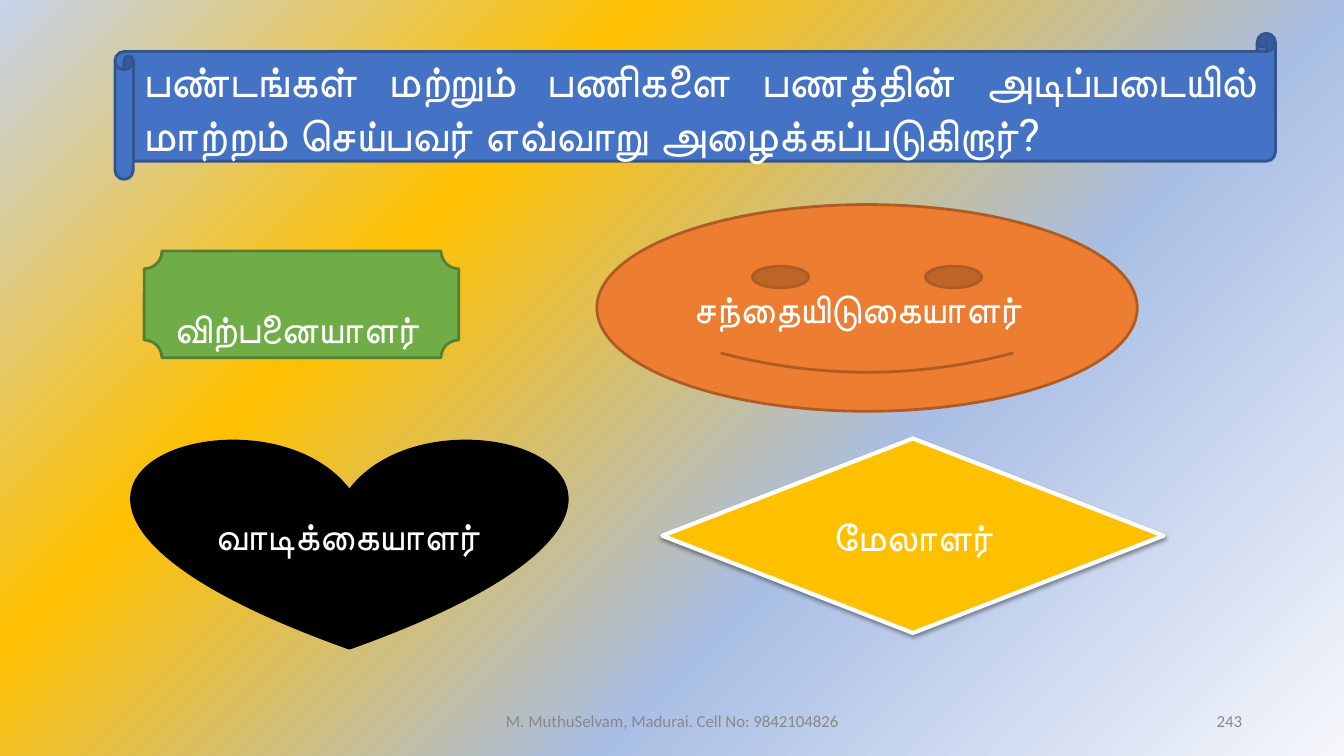
from dataclasses import dataclass

from lxml import etree
from pptx import Presentation, util as u
from pptx.dml import color
from pptx.enum import shapes, text
from pptx.oxml import parse_xml

WIDTH, HEIGHT = 13.33, 7.5
NS = 'xmlns:a="http://schemas.openxmlformats.org/drawingml/2006/main"'
KIND = shapes.MSO_SHAPE
ALIGN = text.PP_ALIGN


@dataclass(frozen=True)
class Theme:
    face: str = "Roboto"
    footer_face: str = "Calibri"
    title_size: int = 32
    answer_size: int = 28
    footer_size: int = 12
    white: str = "FFFFFF"
    grey: str = "888888"
    blue: str = "4472C4"
    blue_edge: str = "325491"
    green: str = "70AD47"
    green_edge: str = "538035"
    orange: str = "ED7D31"
    orange_edge: str = "AF5C24"
    black: str = "000000"
    amber: str = "FFC000"
    backdrop: tuple = ((0, "F5F7FC"), (36, "A9BEE4"), (69, "FFC000"), (100, "C5D3ED"))


THEME = Theme()


@dataclass(frozen=True)
class Area:
    """Place on the slide, in inches."""
    left: float
    top: float
    width: float
    height: float

    def lengths(self) -> list:
        return [u.Inches(v) for v in (self.left, self.top, self.width, self.height)]


@dataclass(frozen=True)
class Figure:
    kind: KIND
    area: Area
    fill: str
    edge: str
    words: str = ""
    align: ALIGN = ALIGN.CENTER
    edge_width: float = 2
    top_inset: float = 0.05
    shadow: bool = False


@dataclass(frozen=True)
class Footer:
    area: Area
    words: str
    align: ALIGN


SCROLL = Figure(KIND.HORIZONTAL_SCROLL, Area(1.14, 0.33, 11.51, 1.45), THEME.blue, THEME.blue_edge)
QUESTION = "பண்டங்கள் மற்றும் பணிகளை பணத்தின் அடிப்படையில் மாற்றம் செய்பவர் எவ்வாறு அழைக்கப்படுகிறார்? "
QUESTION_AREA = Area(1.32, 0.51, 11.24, 1.09)

ANSWERS = (
    Figure(KIND.PLAQUE, Area(1.43, 2.49, 3.12, 1.06), THEME.green, THEME.green_edge,
           "விற்பனையாளர் ", top_inset=0.52),
    Figure(KIND.SMILEY_FACE, Area(5.92, 2.03, 5.36, 2.05), THEME.orange, THEME.orange_edge,
           "சந்தையிடுகையாளர்  "),
    Figure(KIND.HEART, Area(1.32, 4.35, 4.29, 2.08), THEME.black, THEME.black,
           "வாடிக்கையாளர்", align=ALIGN.LEFT),
    Figure(KIND.DIAMOND, Area(6.57, 4.35, 4.97, 1.93), THEME.amber, THEME.white,
           "மேலாளர்", edge_width=3, shadow=True),
)

FOOTERS = (
    Footer(Area(4.42, 6.95, 4.5, 0.4), "M. MuthuSelvam, Madurai. Cell No: 9842104826", ALIGN.CENTER),
    Footer(Area(9.42, 6.95, 3, 0.4), "243", ALIGN.RIGHT),
)


def rgb(value: str) -> color.RGBColor:
    return color.RGBColor.from_string(value)


def write(frame, words: str, size: int, face: str, ink: str, align: ALIGN) -> None:
    frame.word_wrap = True
    frame.auto_size = text.MSO_AUTO_SIZE.NONE
    frame.vertical_anchor = text.MSO_ANCHOR.MIDDLE
    para = frame.paragraphs[0]
    para.alignment = align
    span = para.add_run()
    span.text = words
    span.font.size = u.Pt(size)
    span.font.name = face
    span.font.color.rgb = rgb(ink)


def paint_backdrop(page) -> None:
    """Gradient that spreads from the bottom right corner."""
    fill = page.background.fill
    fill.solid()
    stops = "".join(f'<a:gs pos="{pos * 1000}"><a:srgbClr val="{value}"/></a:gs>'
                    for pos, value in THEME.backdrop)
    gradient = parse_xml(
        f'<a:gradFill {NS} rotWithShape="1"><a:gsLst>{stops}</a:gsLst>'
        '<a:path path="circle"><a:fillToRect l="100000" t="100000"/></a:path>'
        '<a:tileRect r="-100000" b="-100000"/></a:gradFill>')
    solid = next(page.element.iter("{*}solidFill"))
    solid.getparent().replace(solid, gradient)


def add_shadow(shape) -> None:
    effects = next(shape.element.iter("{*}effectLst"))
    effects.append(etree.fromstring(
        f'<a:outerShdw {NS} blurRad="40000" dist="20000" dir="5400000" rotWithShape="0">'
        '<a:srgbClr val="000000"><a:alpha val="38000"/></a:srgbClr></a:outerShdw>'))


def draw_figure(page, figure: Figure) -> None:
    shape = page.shapes.add_shape(figure.kind, *figure.area.lengths())
    shape.shadow.inherit = False
    shape.fill.solid()
    shape.fill.fore_color.rgb = rgb(figure.fill)
    shape.line.color.rgb = rgb(figure.edge)
    shape.line.width = u.Pt(figure.edge_width)
    if figure.shadow:
        add_shadow(shape)
    if figure.words:
        shape.text_frame.margin_top = u.Inches(figure.top_inset)
        write(shape.text_frame, figure.words, THEME.answer_size, THEME.face,
              THEME.white, figure.align)


def draw_question(page) -> None:
    draw_figure(page, SCROLL)
    title = page.shapes.title
    title.left, title.top, title.width, title.height = QUESTION_AREA.lengths()
    write(title.text_frame, QUESTION, THEME.title_size, THEME.face, THEME.white, ALIGN.JUSTIFY)
    # Bring the wording in front of the scroll
    page.shapes.element.append(title.element)


def draw_footer(page, footer: Footer) -> None:
    box = page.shapes.add_textbox(*footer.area.lengths())
    write(box.text_frame, footer.words, THEME.footer_size, THEME.footer_face,
          THEME.grey, footer.align)


def main() -> None:
    deck = Presentation()
    deck.slide_width, deck.slide_height = u.Inches(WIDTH), u.Inches(HEIGHT)
    page = deck.slides.add_slide(deck.slide_layouts.get_by_name("Title Only"))
    paint_backdrop(page)
    draw_question(page)
    for figure in ANSWERS:
        draw_figure(page, figure)
    for footer in FOOTERS:
        draw_footer(page, footer)
    deck.save("out.pptx")


if __name__ == "__main__":
    main()
